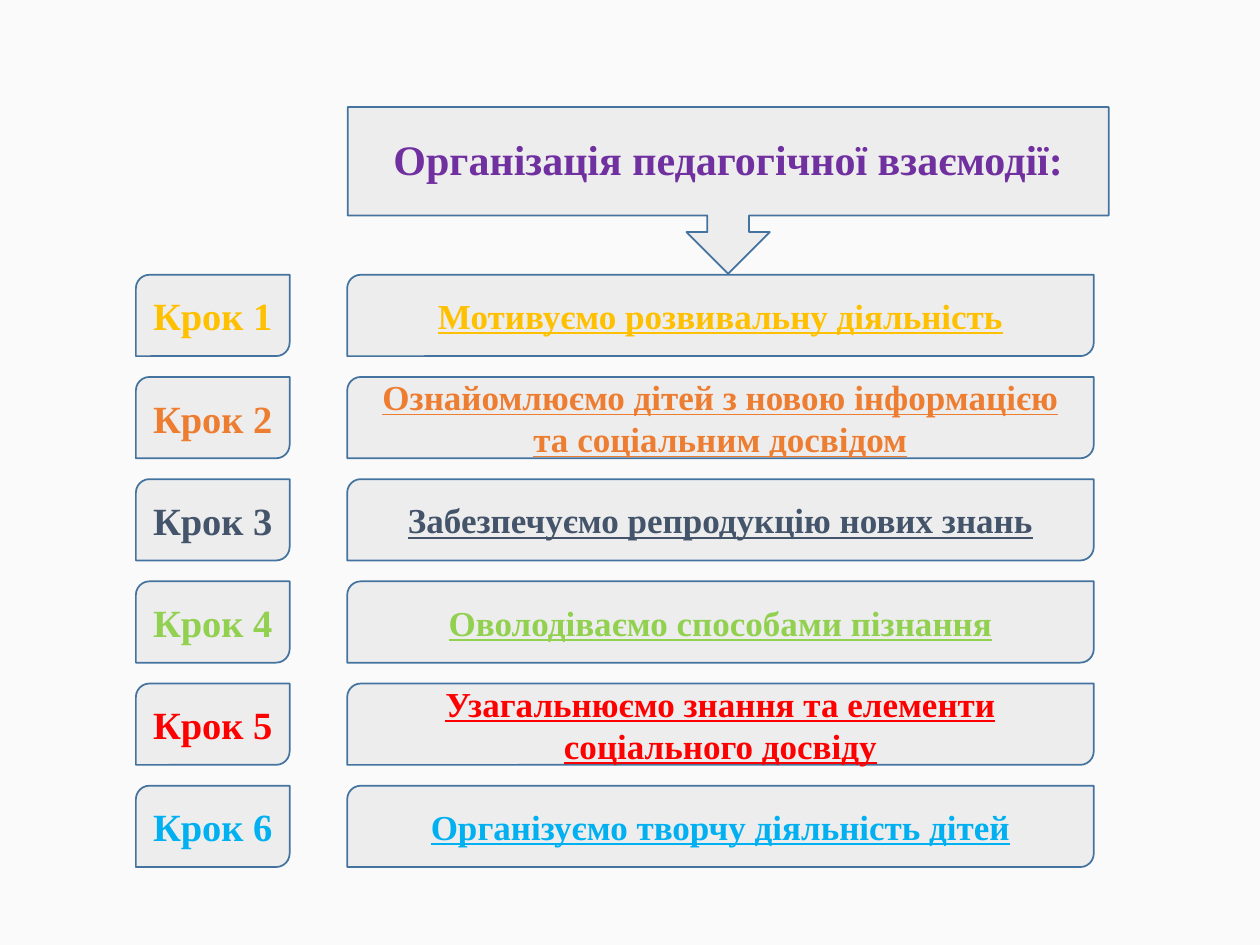
from pptx import Presentation
from pptx.dml.color import RGBColor
from pptx.enum.shapes import MSO_SHAPE
from pptx.enum.text import MSO_ANCHOR, MSO_AUTO_SIZE, PP_ALIGN
from pptx.util import Cm, Pt


def color(value):
    return RGBColor.from_string(value)


def write(shape, text, text_color, **format_values):
    paragraph = shape.text_frame.paragraphs[0]
    paragraph.alignment = PP_ALIGN.CENTER
    run = paragraph.add_run()
    run.text = text
    run.font.color.rgb = color(text_color)
    values = {"name": "Times New Roman", "bold": True, **format_values}
    for name, value in values.items():
        setattr(run.font, name, value)


presentation = Presentation()
presentation.slide_width = Cm(25.4)
presentation.slide_height = Cm(19.05)
slide = presentation.slides.add_slide(presentation.slide_layouts[5])
slide.background.fill.solid()
slide.background.fill.fore_color.rgb = color("FAFAFA")

# Callout pointing at the steps, with the title on top of it
callout = slide.shapes.add_shape(
    MSO_SHAPE.DOWN_ARROW_CALLOUT, Cm(7.01), Cm(2.16), Cm(15.34), Cm(3.36))
boxes = [callout]

title = slide.shapes.title
callout.element.addnext(title.element)
title.left, title.top, title.width, title.height = Cm(7.62), Cm(2.57), Cm(14.12), Cm(1.28)
title_format = {
    "word_wrap": False,
    "auto_size": MSO_AUTO_SIZE.SHAPE_TO_FIT_TEXT,
    "vertical_anchor": MSO_ANCHOR.TOP,
}
for name, value in title_format.items():
    setattr(title.text_frame, name, value)
write(title, "Організація педагогічної взаємодії:", "7030A0", size=Pt(24))

# Steps: number on the left, description on the right
steps = [
    ("Мотивуємо розвивальну діяльність", "FFC000"),
    ("Ознайомлюємо дітей з новою інформацією та соціальним досвідом", "ED7D31"),
    ("Забезпечуємо репродукцію нових знань", "44546A"),
    ("Оволодіваємо способами пізнання", "92D050"),
    ("Узагальнюємо знання та елементи соціального досвіду", "FF0000"),
    ("Організуємо творчу діяльність дітей", "00B0F0"),
]
first_top, row_pitch, row_height = 5.54, 2.06, 1.64
for index, (description, step_color) in enumerate(steps):
    columns = [
        (2.74, 3.1, f"Крок {index + 1}", {"size": Pt(22)}),
        (7.0, 15.05, description, {"size": Pt(20), "underline": True}),
    ]
    for left, width, text, format_values in columns:
        box = slide.shapes.add_shape(
            MSO_SHAPE.ROUND_2_DIAG_RECTANGLE, Cm(left),
            Cm(first_top + index * row_pitch), Cm(width), Cm(row_height))
        box.text_frame.vertical_anchor = MSO_ANCHOR.MIDDLE
        box.text_frame.word_wrap = True
        write(box, text, step_color, **format_values)
        boxes.append(box)

# Shared fill and outline
for box in boxes:
    box.shadow.inherit = False
    box.fill.solid()
    box.fill.fore_color.rgb = color("EDEDED")
    box.line.color.rgb = color("43739E")
    box.line.width = Pt(1)

presentation.save("out.pptx")
